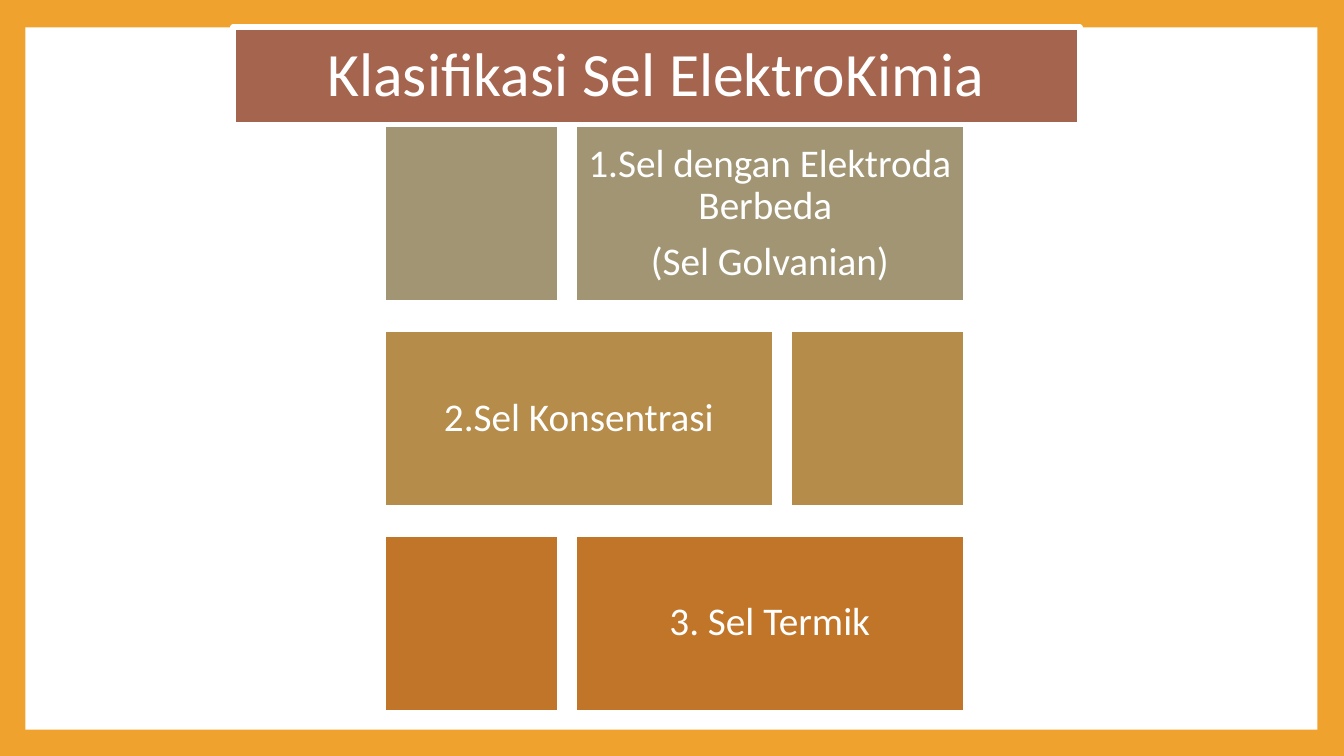
"""Build the slide that classifies electrochemical cells."""
from dataclasses import dataclass

from pptx import Presentation
from pptx.dml.color import RGBColor
from pptx.enum.shapes import MSO_SHAPE
from pptx.enum.text import MSO_ANCHOR, MSO_AUTO_SIZE, PP_ALIGN
from pptx.util import Cm, Pt


@dataclass(frozen=True)
class Theme:
    font: str = "Calibri"
    title_size: int = 44
    tile_size: int = 28
    frame: str = "F0A22E"
    white: str = "FFFFFF"
    title: str = "A5644E"
    tiles: tuple = ("A19574", "B58C4A", "C17529")


def paint(sp, color, line_width):
    sp.fill.solid()
    sp.fill.fore_color.rgb = RGBColor.from_string(color)
    if line_width:
        sp.line.color.rgb = RGBColor.from_string(theme.white)
        sp.line.width = Pt(line_width)
    else:
        sp.line.fill.background()


def write(sp, lines, size, margin, space_after):
    tf = sp.text_frame
    tf.word_wrap = True
    tf.auto_size = MSO_AUTO_SIZE.NONE
    tf.vertical_anchor = MSO_ANCHOR.MIDDLE
    tf.margin_left = tf.margin_right = tf.margin_top = tf.margin_bottom = Cm(margin)
    for i, line in enumerate(lines):
        p = tf.add_paragraph() if i else tf.paragraphs[0]
        p.alignment = PP_ALIGN.CENTER
        p.line_spacing = 0.9
        p.space_after = Pt(space_after)
        r = p.add_run()
        r.text = line
        r.font.name = theme.font
        r.font.size = Pt(size)
        r.font.color.rgb = RGBColor.from_string(theme.white)


theme = Theme()
prs = Presentation()
prs.slide_width, prs.slide_height = Cm(33.87), Cm(19.05)
s = prs.slides.add_slide(prs.slide_layouts[5])
s.background.fill.solid()
s.background.fill.fore_color.rgb = RGBColor.from_string(theme.frame)

panel = s.shapes.add_shape(MSO_SHAPE.RECTANGLE, Cm(0.64), Cm(0.69), Cm(32.56), Cm(17.7))
panel.shadow.inherit = False
paint(panel, theme.white, 0)

title = s.shapes.title
title.element.addprevious(panel.element)
title.left, title.top, title.width, title.height = Cm(5.87), Cm(0.69), Cm(21.34), Cm(2.46)
paint(title, theme.title, 4.25)
write(title, ["Klasifikasi Sel ElektroKimia"], theme.title_size, 0.2, 0)

left, top, height, pitch = 9.7, 3.18, 4.41, 5.16
wide, narrow, gap = 9.78, 4.36, 0.45
cells = [
    ["1.Sel dengan Elektroda Berbeda ", "(Sel Golvanian)"],
    ["2.Sel Konsentrasi"],
    ["3. Sel Termik"],
]
for row, (lines, color) in enumerate(zip(cells, theme.tiles)):
    widths = (wide, narrow) if row % 2 else (narrow, wide)
    x = left
    for width in widths:
        sp = s.shapes.add_shape(
            MSO_SHAPE.RECTANGLE, Cm(x), Cm(top + row * pitch), Cm(width), Cm(height)
        )
        sp.shadow.inherit = False
        paint(sp, color, 1.5)
        if width == wide:
            write(sp, lines, theme.tile_size, 0.3, 9.8)
        x += width + gap

prs.save("out.pptx")
